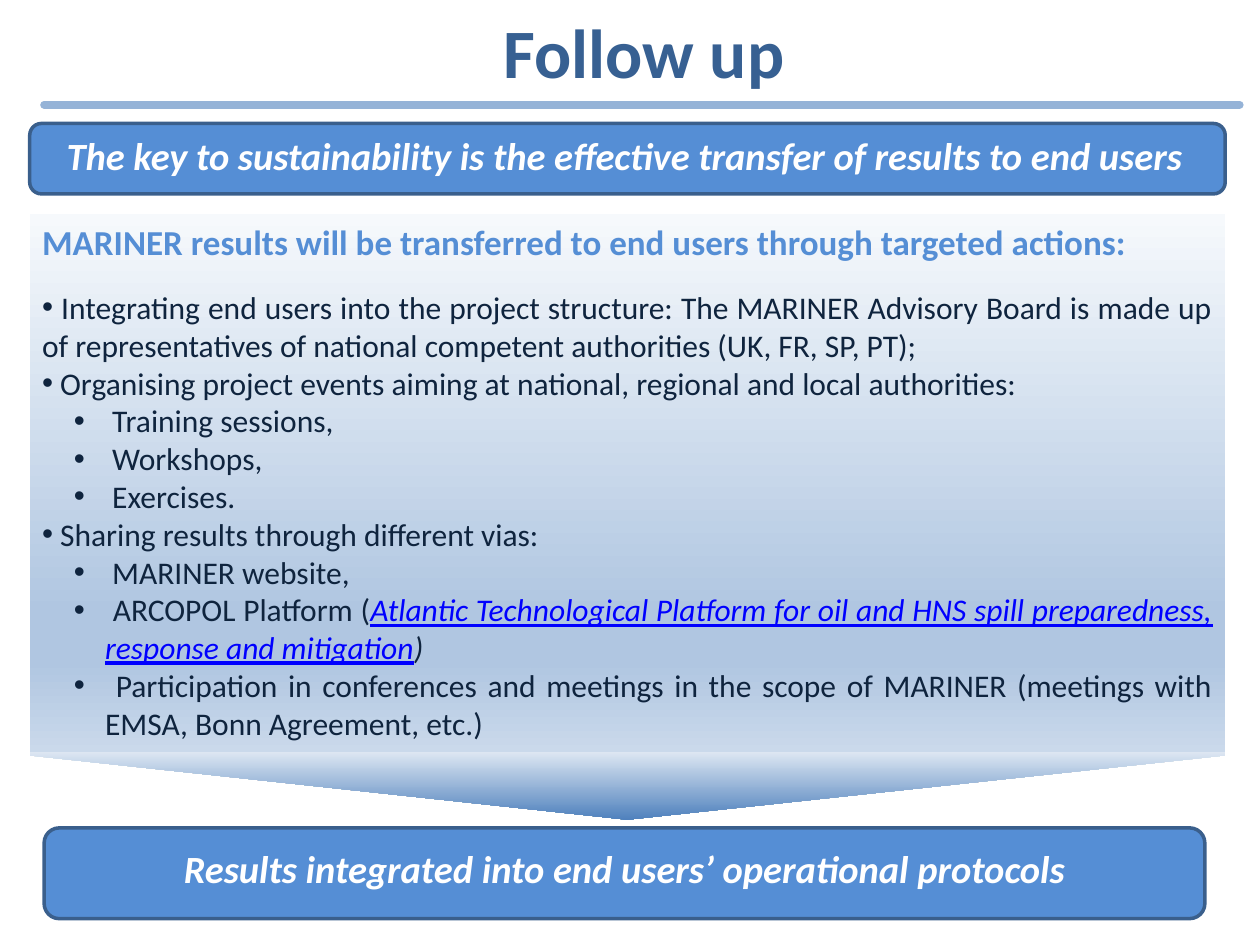
from lxml.etree import SubElement
from pptx import Presentation
from pptx.dml.color import RGBColor
from pptx.enum.shapes import MSO_CONNECTOR as Link, MSO_SHAPE as Preset
from pptx.enum.text import MSO_ANCHOR as Anchor, PP_ALIGN as Align
from pptx.oxml.ns import qn
from pptx.util import Cm, Pt


def color(value):
    return RGBColor.from_string(value)


class FollowUpPage:
    font = "Calibri"
    title_color = "376092"
    accent = "558ED5"
    border = "3A5F8C"
    body_color = "0F243E"
    link_color = "0000FF"

    def __init__(self, deck):
        self.page = deck.slides.add_slide(deck.slide_layouts[5])

    def span(self, para, text, size, ink, bold=False, italic=False, underline=False):
        run = para.add_run()
        run.text = text
        run.font.name, run.font.size = self.font, Pt(size)
        run.font.bold, run.font.italic = bold, italic
        run.font.underline = underline
        run.font.color.rgb = color(ink)

    def title(self, text, left, top, width, height):
        box = self.page.shapes.title
        box.left, box.top, box.width, box.height = map(Cm, (left, top, width, height))
        box.text_frame.vertical_anchor = Anchor.MIDDLE
        para = box.text_frame.paragraphs[0]
        para.alignment = Align.CENTER
        self.span(para, text, 39.6, self.title_color, bold=True)

    def rule(self, left, right, y):
        line = self.page.shapes.add_connector(Link.STRAIGHT, Cm(left), Cm(y), Cm(right), Cm(y))
        line.line.color.rgb = color("95B3D7")
        line.line.width = Pt(4.5)
        line.line._get_or_add_ln().set("cap", "rnd")
        SubElement(line._element.spPr, qn("a:effectLst"))

    def shape(self, preset, left, top, width, height):
        shape = self.page.shapes.add_shape(preset, Cm(left), Cm(top), Cm(width), Cm(height))
        shape.shadow.inherit = False
        return shape

    def gradient_shape(self, preset, left, top, width, height, stops, angle):
        shape = self.shape(preset, left, top, width, height)
        shape.line.fill.background()
        shape.fill.gradient()
        gradient = shape._element.spPr.find(qn("a:gradFill"))
        for child in list(gradient):
            gradient.remove(child)
        stop_list = SubElement(gradient, qn("a:gsLst"))
        for percent, value in stops:
            stop = SubElement(stop_list, qn("a:gs"), pos=str(percent * 1000))
            SubElement(stop, qn("a:srgbClr"), val=value)
        SubElement(gradient, qn("a:lin"), ang=str(angle * 60000), scaled="0")
        return shape

    def banner(self, text, left, top, width, height, text_top):
        band = self.shape(Preset.ROUNDED_RECTANGLE, left, top, width, height)
        band.fill.solid()
        band.fill.fore_color.rgb = color(self.accent)
        band.line.color.rgb = color(self.border)
        band.line.width = Pt(2)
        box = self.page.shapes.add_textbox(Cm(0.89), Cm(text_top), Cm(23.4), Cm(1.19))
        box.text_frame.word_wrap = True
        para = box.text_frame.paragraphs[0]
        para.alignment = Align.CENTER
        self.span(para, text, 22, "FFFFFF", bold=True, italic=True)

    def bullet(self, frame, level, *parts):
        para = frame.add_paragraph()
        para.alignment = Align.JUSTIFY
        para.level = level
        props = para._p.get_or_add_pPr()
        props.set("marL", str(Cm(1.27 * level)))
        props.set("indent", str(-Cm(0.63 * level)))
        SubElement(props, qn("a:buFont"), typeface="Arial")
        SubElement(props, qn("a:buChar"), char="•")
        for text, style in parts:
            self.span(para, text, 18, **{"ink": self.body_color, **style})

    def panel(self, heading, items, left, top, width, height):
        stops = [(0, "F6F9FC"), (74, "B0C6E1"), (83, "B0C6E1"), (100, "CAD9EB")]
        panel = self.gradient_shape(Preset.RECTANGLE, left, top, width, height, stops, 90)
        frame = panel.text_frame
        frame.word_wrap = True
        frame.vertical_anchor = Anchor.TOP
        para = frame.paragraphs[0]
        para.alignment = Align.JUSTIFY
        para.space_after = Pt(14.6)
        self.span(para, heading, 20, self.accent, bold=True)
        for level, *parts in items:
            self.bullet(frame, level, *parts)


def main():
    deck = Presentation()
    deck.slide_width, deck.slide_height = Cm(25.4), Cm(19.05)
    page = FollowUpPage(deck)

    # Arrow tip below the panel
    arrow = page.gradient_shape(Preset.PENTAGON, 11.35, 3.18, 2.59, 24.1,
                                [(0, "FFFFFF"), (35, "FFFFFF"), (100, "4F81BD")], 0)
    arrow.rotation = 90

    # Title and rule
    page.title("Follow up", 1.27, 0.15, 23.42, 1.75)
    page.rule(0.89, 24.99, 2.11)

    # Actions: level, then text parts with their style
    link = {"ink": page.link_color, "italic": True, "underline": True}
    items = [
        (0, (" Integrating end users into the project structure: The MARINER Advisory Board is "
             "made up of representatives of national competent authorities (UK, FR, SP, PT);", {})),
        (0, (" Organising project events aiming at national, regional and local authorities:", {})),
        (1, (" Training sessions,", {})),
        (1, (" Workshops,", {})),
        (1, (" Exercises.", {})),
        (0, (" Sharing results through different vias:", {})),
        (1, (" MARINER website,", {})),
        (1, (" ARCOPOL Platform (", {}),
            ("Atlantic Technological Platform for oil and HNS spill preparedness, "
             "response and mitigation", link),
            (")", {"italic": True})),
        (1, (" Participation in conferences and meetings in the scope of MARINER "
             "(meetings with EMSA, Bonn Agreement, etc.)", {})),
    ]
    page.panel("MARINER results will be transferred to end users through targeted actions:",
               items, 0.6, 4.32, 24.1, 10.85)

    # Key message and outcome
    page.banner("The key to sustainability is the effective transfer of results to end users",
                0.6, 2.49, 24.1, 1.42, 2.54)
    page.banner("Results integrated into end users’ operational protocols",
                0.89, 16.69, 23.4, 1.83, 16.92)

    deck.save("out.pptx")


if __name__ == "__main__":
    main()
